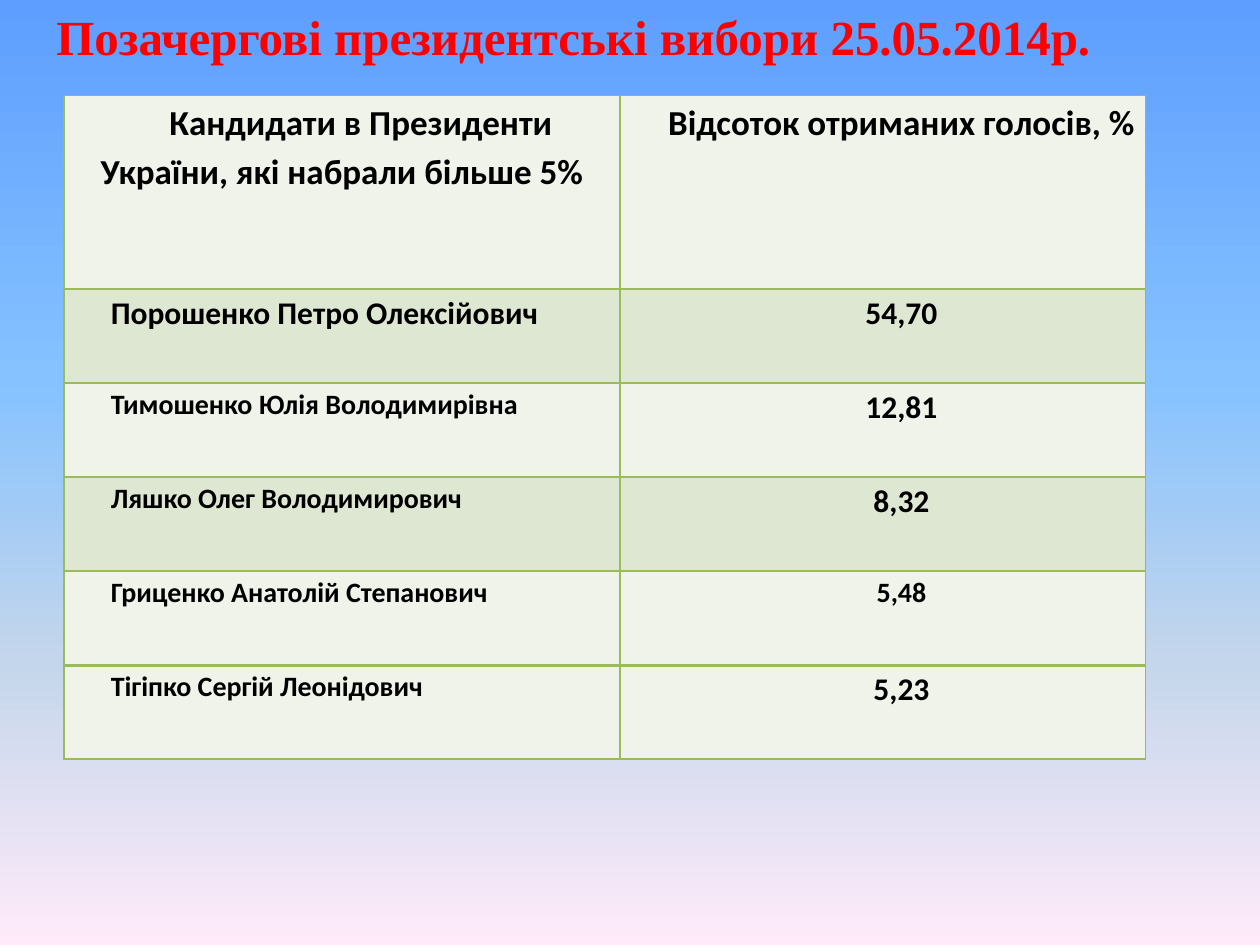
from copy import deepcopy

from lxml.etree import SubElement
from pptx import Presentation
from pptx.dml.color import RGBColor
from pptx.enum.text import PP_ALIGN
from pptx.oxml.ns import qn
from pptx.util import Inches, Pt

BLACK = RGBColor(0x00, 0x00, 0x00)
RED = RGBColor(0xFF, 0x00, 0x00)
GREEN = RGBColor(0x9B, 0xBB, 0x59)
LIGHT = RGBColor(0xEF, 0xF3, 0xEA)
BAND = RGBColor(0xDE, 0xE7, 0xD1)
SKY = [(0, RGBColor(0x5E, 0x9E, 0xFF)), (40, RGBColor(0x85, 0xC2, 0xFF)),
       (70, RGBColor(0xC4, 0xD6, 0xEB)), (100, RGBColor(0xFF, 0xEB, 0xFA))]

HEADER = [("Кандидати в Президенти України, які набрали більше 5%", 20),
          ("Відсоток отриманих голосів, %", 20)]
RESULTS = [
    [("Порошенко Петро Олексійович", 18), ("54,70", 18)],
    [("Тимошенко Юлія Володимирівна", 16), ("12,81", 18)],
    [("Ляшко Олег Володимирович", 16), ("8,32", 18)],
    [("Гриценко Анатолій Степанович", 16), ("5,48", 16)],
    [("Тігіпко Сергій Леонідович", 16), ("5,23", 18)],
]
FILLS = [LIGHT, BAND, LIGHT, BAND, LIGHT, LIGHT]


class Deck:
    """Hold the style and the current slide; lengths are shares of the slide."""

    def __init__(self, width=10, height=7.5):
        self.prs = Presentation()
        self.prs.slide_width, self.prs.slide_height = Inches(width), Inches(height)
        self.s = self.prs.slides.add_slide(self.prs.slide_layouts[6])

    def x(self, share):
        return int(self.prs.slide_width * share)

    def y(self, share):
        return int(self.prs.slide_height * share)

    def background(self, stops):
        fill = self.s.background.fill
        fill.gradient()
        fill.gradient_angle = 270
        gs_list = next(self.s.element.iter(qn("a:gsLst")))
        for _ in stops[len(gs_list):]:
            gs_list.append(deepcopy(gs_list[0]))
        for stop, (position, color) in zip(fill.gradient_stops, stops):
            stop.position = position / 100
            stop.color.rgb = color

    def style(self, p, size, font, color):
        for r in p.runs:
            r.font.size, r.font.name, r.font.bold = Pt(size), font, True
            r.font.color.rgb = color

    def title(self, text, left, top, width, height):
        sp = self.s.shapes.add_textbox(self.x(left), self.y(top), self.x(width), self.y(height))
        tf = sp.text_frame
        tf.word_wrap = True
        tf.text = text
        self.style(tf.paragraphs[0], 28, "Times New Roman", RED)

    def border(self, cell, top_width):
        tc_pr = cell._tc.get_or_add_tcPr()
        for side in "LRTB":
            width = top_width if side == "T" else 1
            ln = SubElement(tc_pr, qn(f"a:ln{side}"), w=str(Pt(width)))
            fill = SubElement(ln, qn("a:solidFill"))
            SubElement(fill, qn("a:srgbClr"), val=str(GREEN))

    def cell(self, cell, text, size, fill, align, top_width):
        cell.margin_left = cell.margin_right = Inches(0.07)
        cell.margin_top = cell.margin_bottom = 0
        self.border(cell, top_width)
        cell.fill.solid()
        cell.fill.fore_color.rgb = fill
        p = cell.text_frame.paragraphs[0]
        p.text = text
        p.alignment, p.line_spacing = align, 1.15
        p_pr = p._p.get_or_add_pPr()
        p_pr.set("marL", "0")
        p_pr.set("indent", str(Inches(0.3)))
        self.style(p, size, "Calibri", BLACK)

    def table(self, rows, left, top, widths, heights):
        table = self.s.shapes.add_table(
            len(rows), len(widths), self.x(left), self.y(top),
            self.x(sum(widths)), self.y(sum(heights))).table
        for column, width in zip(table.columns, widths):
            column.width = self.x(width)
        for row, height in zip(table.rows, heights):
            row.height = self.y(height)
        last = len(rows) - 1
        for i, row in enumerate(rows):
            top_width = 2 if i == last else 1
            for j, (text, size) in enumerate(row):
                align = PP_ALIGN.JUSTIFY if i and not j else PP_ALIGN.CENTER
                self.cell(table.cell(i, j), text, size, FILLS[i], align, top_width)


def main():
    deck = Deck()
    deck.background(SKY)
    deck.table([HEADER] + RESULTS, 0.051, 0.101, [0.441, 0.417],
               [0.205] + [0.0995] * len(RESULTS))
    deck.title("Позачергові президентські вибори 25.05.2014р.", 0.035, 0, 0.874, 0.076)
    deck.prs.save("out.pptx")


if __name__ == "__main__":
    main()
